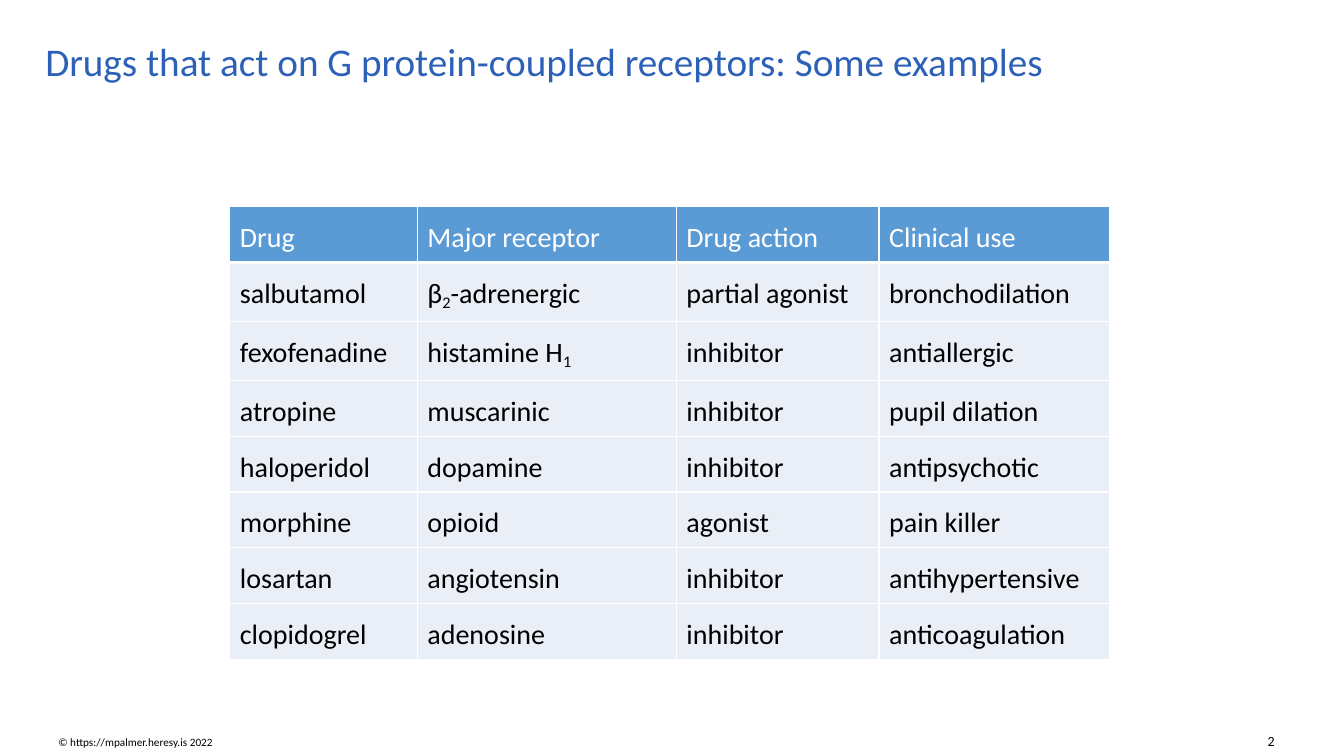
from lxml import etree
from pptx import Presentation
from pptx.dml.color import RGBColor
from pptx.enum.text import MSO_ANCHOR, PP_ALIGN
from pptx.oxml.ns import qn
from pptx.util import Inches, Pt

LEFT, RIGHT = PP_ALIGN.LEFT, PP_ALIGN.RIGHT
MIDDLE, BOTTOM = MSO_ANCHOR.MIDDLE, MSO_ANCHOR.BOTTOM
BLANK_LAYOUT = 6

DRUGS = [
    ("Drug", "Major receptor", "Drug action", "Clinical use"),
    ("salbutamol", "β_2_-adrenergic", "partial agonist", "bronchodilation"),
    ("fexofenadine", "histamine H_1", "inhibitor", "antiallergic"),
    ("atropine", "muscarinic", "inhibitor", "pupil dilation"),
    ("haloperidol", "dopamine", "inhibitor", "antipsychotic"),
    ("morphine", "opioid", "agonist", "pain killer"),
    ("losartan", "angiotensin", "inhibitor", "antihypertensive"),
    ("clopidogrel", "adenosine", "inhibitor", "anticoagulation"),
]


def colour(code):
    return RGBColor.from_string(code)


class Slide:
    """Hold the style and the page; lengths are percentages of the slide's size."""

    font = "Calibri"
    ink, title_ink, white = "000000", "2D61B7", "FFFFFF"
    header_fill, body_fill = "5B9BD5", "EAEFF7"

    def __init__(self, deck):
        self.deck = deck
        self.page = deck.slides.add_slide(deck.slide_layouts[BLANK_LAYOUT])

    def across(self, share):
        return round(self.deck.slide_width * share / 100)

    def down(self, share):
        return round(self.deck.slide_height * share / 100)

    def frame(self, left, top, width, height):
        return self.across(left), self.down(top), self.across(width), self.down(height)

    def add_spans(self, para, text, size, ink):
        for index, piece in enumerate(text.split("_")):
            span = para.add_run()
            span.text = piece
            span.font.name = self.font
            span.font.size = Pt(size)
            span.font.color.rgb = colour(ink)
            if index % 2:
                span._r.get_or_add_rPr().set("baseline", "-20000")

    def text(self, area, text, size, ink=ink, anchor=BOTTOM, align=LEFT, spacing=None):
        box = self.page.shapes.add_textbox(*self.frame(*area))
        box.text_frame.word_wrap = True
        box.text_frame.vertical_anchor = anchor
        para = box.text_frame.paragraphs[0]
        para.alignment = align
        para.line_spacing = spacing
        self.add_spans(para, text, size, ink)

    def border(self, cell, bottom):
        properties = cell._tc.get_or_add_tcPr()
        for side, width in (("L", 1), ("R", 1), ("T", 1), ("B", bottom)):
            line = etree.SubElement(properties, qn(f"a:ln{side}"), w=str(int(Pt(width))))
            fill = etree.SubElement(line, qn("a:solidFill"))
            etree.SubElement(fill, qn("a:srgbClr"), val=self.white)

    def cell(self, cell, text, header):
        cell.margin_left = cell.margin_right = Inches(0.1)
        cell.margin_top, cell.margin_bottom = Inches(0.14), Inches(0.08)
        self.border(cell, 3 if header else 1)
        cell.fill.solid()
        cell.fill.fore_color.rgb = colour(self.header_fill if header else self.body_fill)
        ink = self.white if header else self.ink
        self.add_spans(cell.text_frame.paragraphs[0], text, 20, ink)

    def table(self, left, top, widths, row_height, rows):
        area = self.frame(left, top, sum(widths), row_height * len(rows))
        table = self.page.shapes.add_table(len(rows), len(widths), *area).table
        for column, width in zip(table.columns, widths):
            column.width = self.across(width)
        for index, row in enumerate(rows):
            table.rows[index].height = self.down(row_height)
            for place, text in enumerate(row):
                self.cell(table.cell(index, place), text, index == 0)


def main():
    deck = Presentation()
    deck.slide_width, deck.slide_height = Inches(13.33), Inches(7.5)
    slide = Slide(deck)
    slide.text((3.6, 96.67, 23.56, 3.07), "© https://mpalmer.heresy.is 2022", 8)
    slide.text((90.32, 96.13, 5.25, 3.6), "2", 10, align=RIGHT)
    slide.text((2.63, 3.2, 95.27, 10.4),
               "Drugs that act on G protein-coupled receptors: Some examples",
               28, Slide.title_ink, MIDDLE, spacing=0.9)
    slide.table(17.1, 27.33, (13.95, 19.28, 15.08, 17.18), 6.67, DRUGS)
    deck.save("out.pptx")


if __name__ == "__main__":
    main()
